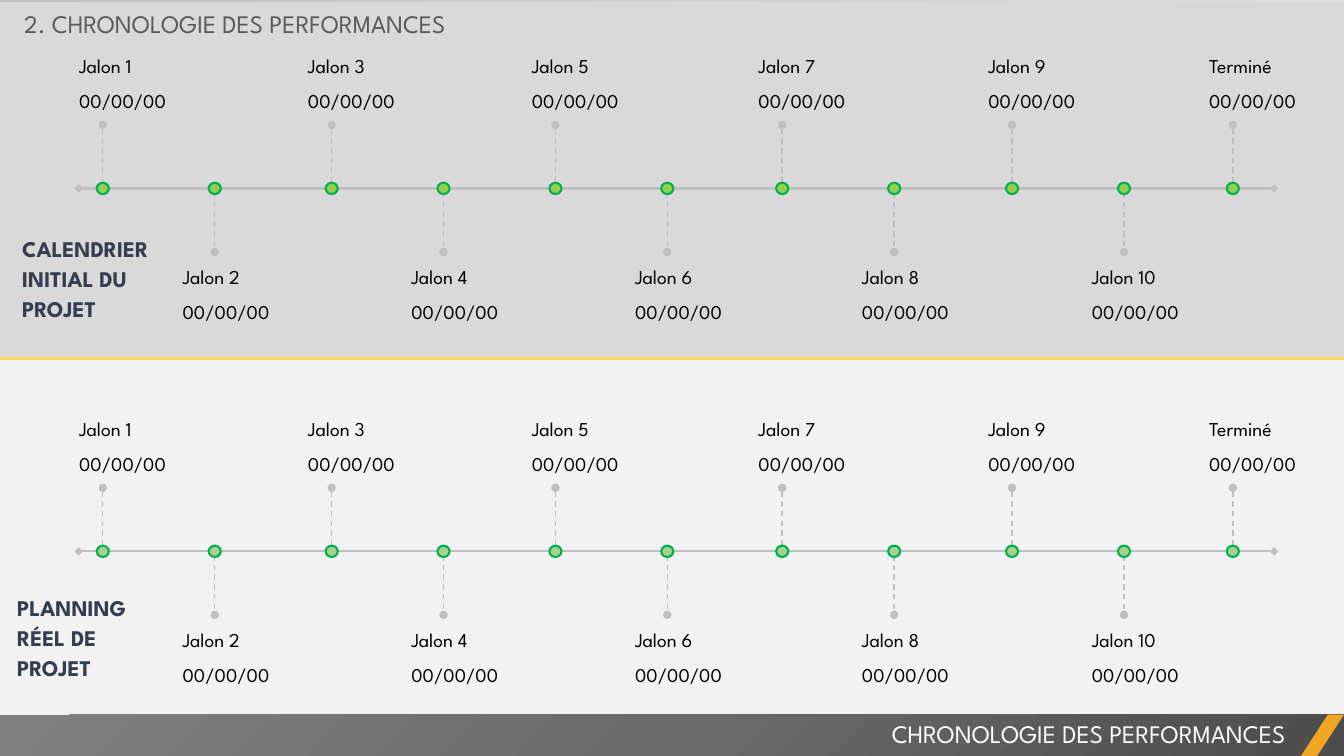
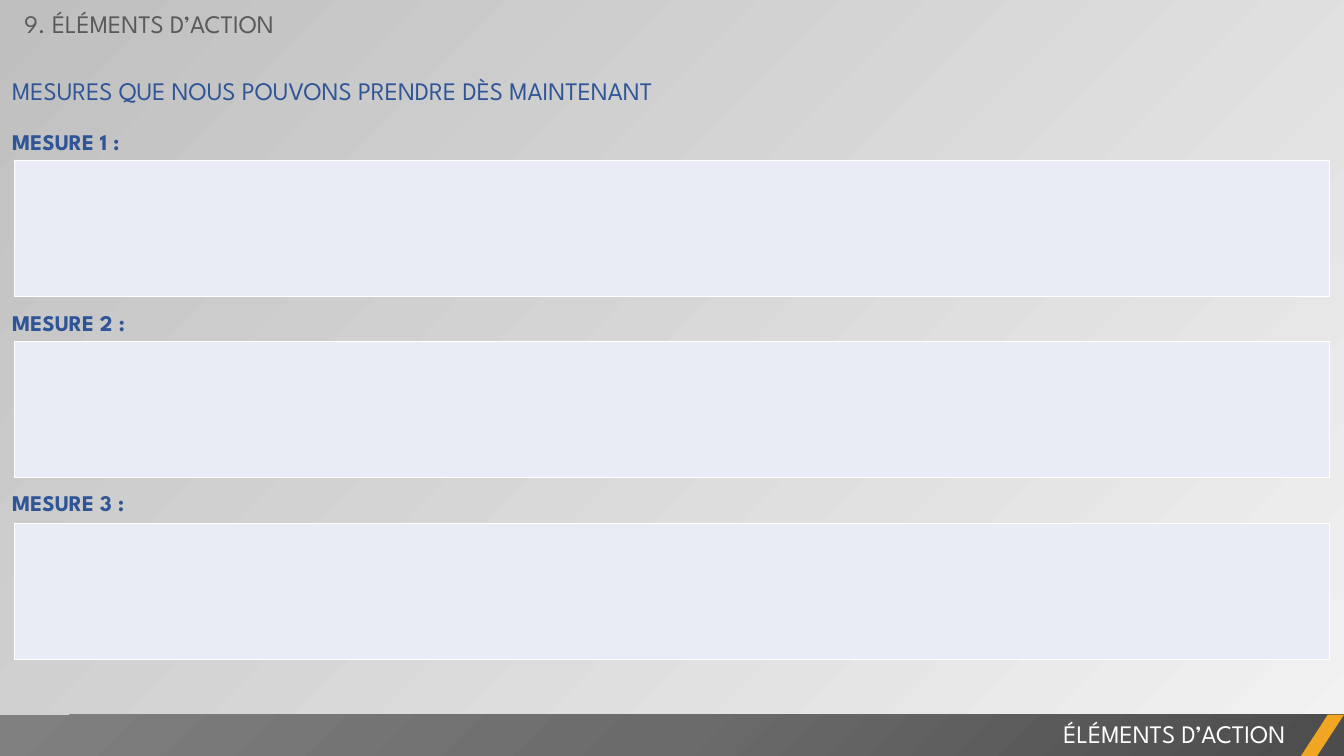
"""Builds a milestone timeline slide and an action items slide."""
from lxml import etree
from pptx import Presentation, util as u
from pptx.dml.color import RGBColor
from pptx.enum import dml, shapes, text
from pptx.oxml import parse_xml
from pptx.oxml.ns import qn

NS = 'xmlns:a="http://schemas.openxmlformats.org/drawingml/2006/main"'
FONT = "League Spartan"
GREY, NAVY, BLUE, WHITE = "BFBFBF", "333F50", "2F5597", "FFFFFF"
rgb = RGBColor.from_string

deck = Presentation()
deck.slide_width, deck.slide_height = u.Inches(13.333), u.Inches(7.5)
col, row = deck.slide_width / 100, deck.slide_height / 100


def at(x, y, w, h):
    """Turn shares of the slide, in percent, into lengths."""
    return [u.Emu(round(n * k)) for n, k in zip((x, y, w, h), (col, row, col, row))]


def say(box, words, size, tint, bold=False, lead=None, after=0, side="LEFT", pad=(0.1, 0.05)):
    """Write the words into the box and format them."""
    frame = box.text_frame
    frame.text = words
    frame.word_wrap = True
    frame.auto_size = text.MSO_AUTO_SIZE.NONE
    frame.vertical_anchor = text.MSO_ANCHOR.TOP
    frame.margin_left = frame.margin_right = u.Inches(pad[0])
    frame.margin_top = frame.margin_bottom = u.Inches(pad[1])
    for para in frame.paragraphs:
        para.alignment = getattr(text.PP_ALIGN, side)
        para.space_after = u.Pt(after)
        if lead:
            para.line_spacing = u.Pt(lead)
        for run in para.runs:
            run.font.name, run.font.size, run.font.bold = FONT, u.Pt(size), bold
            run.font.color.rgb = rgb(tint)


label = dict(bold=True, lead=21.5, pad=(0.12, 0.06))
time, acts = [deck.slides.add_slide(deck.slide_layouts[5]) for _ in range(2)]
lines = []

for top, high, tint in ((0.27, 47.2, "D9D9D9"), (47.47, 52.53, "F2F2F2")):
    band = time.shapes.add_shape(shapes.MSO_SHAPE.RECTANGLE, *at(0, top, 100, high))
    band.shadow.inherit = False
    band.fill.solid()
    band.fill.fore_color.rgb = rgb(tint)
    band.line.fill.background()

marks = [7.65, 15.98, 24.68, 33, 41.33, 49.65, 58.2, 66.53, 75.3, 83.63, 91.73]
names = [f"Jalon\u00a0{n}" for n in range(1, 11)] + ["Terminé"]
plans = (
    (24.93, "92D050", "CALENDRIER INITIAL DU PROJET", (0.75, 29.87, 11.63, 13.6)),
    (72.93, "A9D18E", "PLANNING RÉEL DE PROJET", (0.38, 77.33, 13.2, 13.6)),
)
for axis, tint, words, spot in plans:
    group = time.shapes.add_group_shape().shapes
    rail = group.add_connector(shapes.MSO_CONNECTOR.STRAIGHT, *at(5.85, axis, 94.8, axis))
    lines.append((rail, GREY, 1.5, None, "diamond"))
    for i, (x, name) in enumerate(zip(marks, names)):
        below = i % 2
        start = axis if below else axis - 8.4
        stem = group.add_connector(shapes.MSO_CONNECTOR.STRAIGHT, *at(x, start, x, start + 8.4))
        lines.append((stem, GREY, 1, dml.MSO_LINE.DASH, "oval"))
        dot = group.add_shape(shapes.MSO_SHAPE.OVAL, *at(x - 0.45, axis - 0.75, 0.9, 1.5))
        dot.shadow.inherit = False
        dot.fill.solid()
        dot.fill.fore_color.rgb = rgb(tint)
        dot.line.color.rgb = rgb("00B050")
        dot.line.width = u.Pt(1.5)
        left, top = (x - 3.13, axis + 9.47) if below else (x - 2.5, axis - 18.4)
        note = group.add_textbox(*at(left, top, 14.25, 8.53))
        say(note, f"{name}\n00/00/00", 14, "000000", after=8)
    say(time.shapes.add_textbox(*at(*spot)), words, 16, NAVY, **label)

split = time.shapes.add_connector(shapes.MSO_CONNECTOR.STRAIGHT, *at(0, 47.47, 100, 47.47))
lines.append((split, "FFD966", 2.25, None, None))

for line, tint, width, dash, tip in lines:
    line.line.color.rgb = rgb(tint)
    line.line.width = u.Pt(width)
    if dash:
        line.line.dash_style = dash
    prop = line._element.spPr
    if tip:
        for end in ("a:headEnd", "a:tailEnd"):
            etree.SubElement(prop.find(qn("a:ln")), qn(end), type=tip)
    etree.SubElement(prop, qn("a:effectLst"))

head = acts.shapes.add_textbox(*at(0, 9.2, 57.23, 5.47))
say(head, "MESURES QUE NOUS POUVONS PRENDRE DÈS MAINTENANT", 18, BLUE, **{**label, "bold": False})
for i in range(3):
    name = acts.shapes.add_textbox(*at(0, 15.73 + 23.87 * i, 57.23, 5.33))
    say(name, f"MESURE\u00a0{i + 1}\u00a0:", 16, BLUE, **label)
    grid = acts.shapes.add_table(1, 1, *at(1.05, 21.2 + 24 * i, 97.88, 18)).table
    grid.first_row = grid.horz_banding = False
    cell = grid.cell(0, 0)
    prop = cell._tc.get_or_add_tcPr()
    for side in "LRTB":
        prop.append(parse_xml(
            f'<a:ln{side} {NS} w="12700"><a:solidFill><a:srgbClr val="{WHITE}"/>'
            f'</a:solidFill></a:ln{side}>'))
    cell.fill.solid()
    cell.fill.fore_color.rgb = rgb("E9EBF5")

stops = "".join(
    f'<a:gs pos="{pos}"><a:srgbClr val="{tint}"/></a:gs>'
    for pos, tint in ((0, "4C4C4C"), (50000, "6B6B6B"), (100000, "808080")))
shade = (f'<a:gradFill {NS} rotWithShape="1"><a:gsLst>{stops}</a:gsLst>'
         '<a:path path="circle"><a:fillToRect l="100000" t="100000"/></a:path></a:gradFill>')

for slide, num, topic in ((time, 2, "CHRONOLOGIE DES PERFORMANCES"), (acts, 9, "ÉLÉMENTS D’ACTION")):
    back = slide.background.fill
    back.gradient()
    back.gradient_angle = 135
    for stop, tint in zip(back.gradient_stops, ("F2F2F2", GREY)):
        stop.color.rgb = rgb(tint)

    title = slide.shapes.title
    title.left, title.top, title.width, title.height = at(1.05, 0.4, 39.83, 5.33)
    say(title, f"{num}. {topic}", 18, "595959")
    slide.shapes._spTree.append(title._element)

    foot = slide.shapes.add_shape(shapes.MSO_SHAPE.RECTANGLE, *at(0, 94.53, 100, 5.6))
    foot.shadow.inherit = False
    foot.line.fill.background()
    foot.fill.background()
    prop = foot._element.spPr
    prop.replace(prop.find(qn("a:noFill")), parse_xml(shade))
    say(slide.shapes.add_textbox(*at(39.38, 94.4, 57, 5.33)), topic, 18, WHITE, side="RIGHT")
    slash = slide.shapes.add_shape(shapes.MSO_SHAPE.PARALLELOGRAM, *at(96.75, 94.53, 3.25, 5.6))
    slash.adjustments[0] = 0.65
    slash.shadow.inherit = False
    slash.fill.solid()
    slash.fill.fore_color.rgb = rgb("F0A622")
    slash.line.fill.background()

deck.save("out.pptx")
